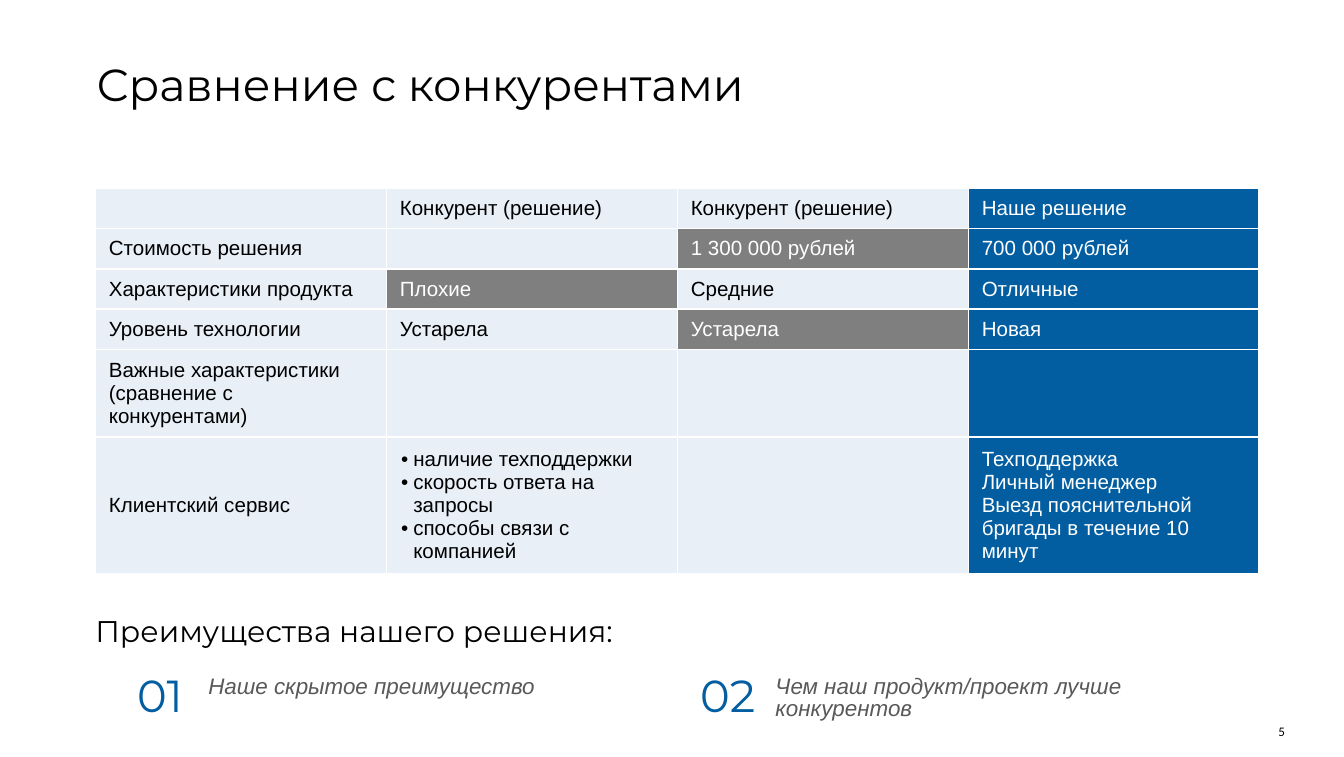
from lxml.etree import SubElement
from pptx import Presentation
from pptx.dml.color import RGBColor
from pptx.enum.text import MSO_ANCHOR as ANCHOR, PP_ALIGN as ALIGN
from pptx.oxml.ns import qn
from pptx.util import Inches, Pt

BLUE, GRAY, PALE = "025EA1", "7F7F7F", "E9EFF7"
BLACK, WHITE, DARK = "000000", "FFFFFF", "595959"


def style(p, font, size, color, italic=False):
    for r in p.runs:
        r.font.name, r.font.size, r.font.italic = font, Pt(size), italic
        r.font.color.rgb = RGBColor.from_string(color)


def add_text(box, text, font, size, color, spacing=1.0, insets=(0, 0, 0, 0), italic=False):
    tf = s.shapes.add_textbox(*[Inches(v) for v in box]).text_frame
    tf.word_wrap = True
    tf.margin_left, tf.margin_top, tf.margin_right, tf.margin_bottom = [Inches(v) for v in insets]
    tf.text = text
    p = tf.paragraphs[0]
    p.line_spacing = spacing
    style(p, font, size, color, italic)
    return tf


prs = Presentation()
prs.slide_width, prs.slide_height = Inches(10), Inches(5.63)
s = prs.slides.add_slide(prs.slide_layouts[6])

number = add_text((8.95, 5.35, 0.61, 0.15), "5", "Calibri", 7, BLACK)
number.vertical_anchor = ANCHOR.BOTTOM
number.paragraphs[0].alignment = ALIGN.RIGHT

add_text((0.62, 0.37, 9.45, 0.5), "Сравнение с конкурентами", "Montserrat", 24, BLACK,
         insets=(0.1, 0.05, 0.1, 0.05))

rows = [
    ["", "Конкурент (решение)", "Конкурент (решение)", "Наше решение"],
    ["Стоимость решения", "", "1 300 000 рублей", "700 000 рублей"],
    ["Характеристики продукта", "Плохие", "Средние", "Отличные"],
    ["Уровень технологии", "Устарела", "Устарела", "Новая"],
    ["Важные характеристики (сравнение с конкурентами)", "", "", ""],
    ["Клиентский сервис",
     "наличие техподдержки\nскорость ответа на запросы\nспособы связи с компанией", "",
     "Техподдержка\nЛичный менеджер\vВыезд пояснительной бригады в течение 10 минут"],
]
heights = [0.3, 0.3, 0.3, 0.3, 0.65, 1.01]
weak_cells = {(1, 2), (2, 1), (3, 2)}
bullet_cell = (5, 1)

table = s.shapes.add_table(len(rows), 4, Inches(0.71), Inches(1.4),
                           Inches(8.66), Inches(sum(heights))).table
table.first_row = table.horz_banding = False
for row, height in zip(table.rows, heights):
    row.height = Inches(height)

for i, values in enumerate(rows):
    for j, value in enumerate(values):
        cell = table.cell(i, j)
        fill = BLUE if j == 3 else GRAY if (i, j) in weak_cells else PALE
        cell.text = value
        cell.vertical_anchor = ANCHOR.MIDDLE
        tcPr = cell._tc.get_or_add_tcPr()
        for side in ("lnL", "lnR", "lnT", "lnB"):
            line = SubElement(tcPr, qn(f"a:{side}"), w=str(Pt(1)))
            SubElement(SubElement(line, qn("a:solidFill")), qn("a:srgbClr"), val=WHITE)
        cell.fill.solid()
        cell.fill.fore_color.rgb = RGBColor.from_string(fill)
        for p in cell.text_frame.paragraphs:
            if (i, j) == bullet_cell:
                pPr = p._p.get_or_add_pPr()
                pPr.set("marL", str(Inches(0.1)))
                pPr.set("indent", str(Inches(-0.09)))
                SubElement(SubElement(pPr, qn("a:buClr")), qn("a:srgbClr"), val=BLACK)
                SubElement(pPr, qn("a:buFont"), typeface="Arial")
                SubElement(pPr, qn("a:buChar"), char="•")
            style(p, "Arial", 11, BLACK if fill == PALE else WHITE)
            if not value:
                SubElement(p._p, qn("a:endParaRPr"), sz="1100")

add_text((0.71, 4.61, 6.39, 0.22), "Преимущества нашего решения:", "Montserrat", 16, BLACK, 0.8)

advantages = [
    ("01", 1.02, 1.55, "Наше скрытое преимущество"),
    ("02", 5.21, 5.77, "Чем наш продукт/проект лучше конкурентов"),
]
for label, label_left, left, text in advantages:
    add_text((label_left, 5.01, 0.61, 0.6), label, "Montserrat", 24, BLUE, 0.9, (0, 0, 0, 0.04))
    tf = add_text((left, 5.04, 3.34, 0.32), text, "Arial", 12, DARK, 0.8, italic=True)
    tf.paragraphs[0].space_after = Pt(6)

prs.save("out.pptx")
